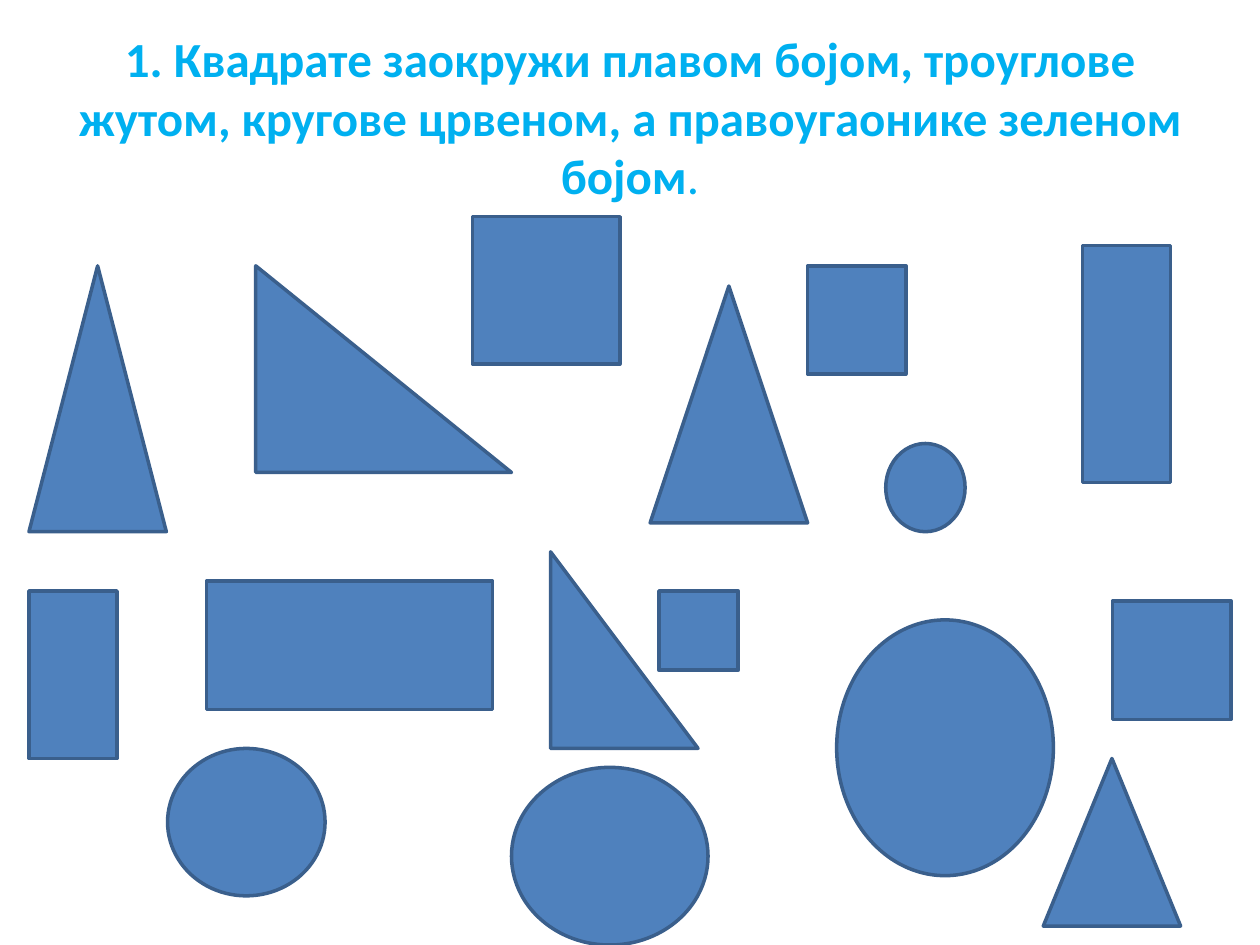
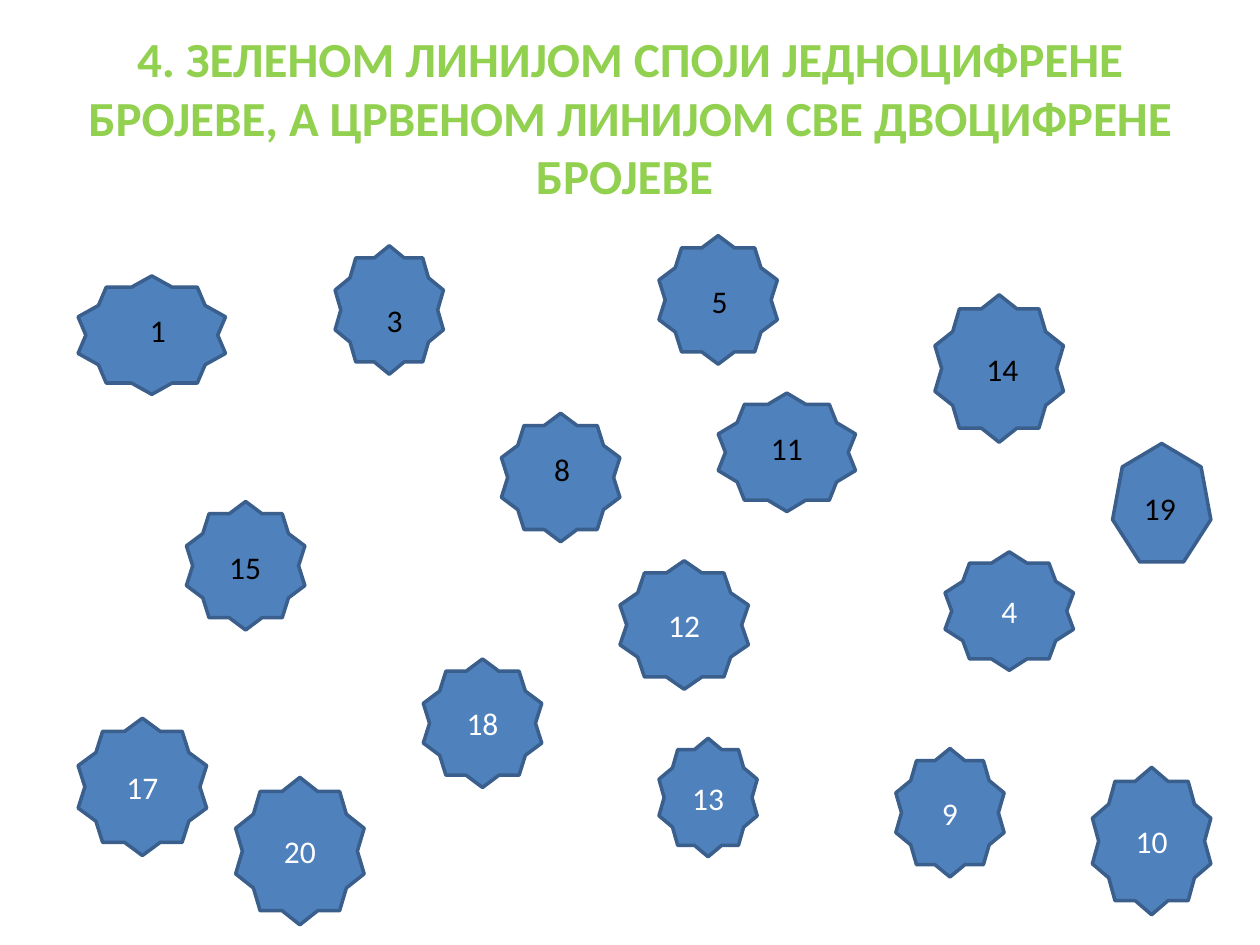
from dataclasses import dataclass

from pptx import Presentation
from pptx.dml.color import RGBColor
from pptx.enum.shapes import MSO_SHAPE
from pptx.enum.text import MSO_ANCHOR, MSO_AUTO_SIZE, PP_ALIGN
from pptx.util import Inches, Pt

TRIANGLE = MSO_SHAPE.ISOSCELES_TRIANGLE
RIGHT_TRIANGLE = MSO_SHAPE.RIGHT_TRIANGLE
RECTANGLE = MSO_SHAPE.RECTANGLE
CIRCLE = MSO_SHAPE.OVAL
STAR = MSO_SHAPE.STAR_10_POINT
HEPTAGON = MSO_SHAPE.HEPTAGON
MIDDLE = MSO_ANCHOR.MIDDLE
CENTER = PP_ALIGN.CENTER
FIXED_SIZE = MSO_AUTO_SIZE.NONE
GROW = MSO_AUTO_SIZE.SHAPE_TO_FIT_TEXT
TITLE_ONLY = 5


@dataclass(frozen=True)
class Theme:
    font: str = "Calibri"
    title_size: int = 28
    number_size: int = 18
    line_width: int = 2
    fill: RGBColor = RGBColor(0x4F, 0x81, 0xBD)
    outline: RGBColor = RGBColor(0x3A, 0x5F, 0x8C)
    sky: RGBColor = RGBColor(0x00, 0xB0, 0xF0)
    lime: RGBColor = RGBColor(0x92, 0xD0, 0x50)
    black: RGBColor = RGBColor(0, 0, 0)
    white: RGBColor = RGBColor(0xFF, 0xFF, 0xFF)


class Worksheet:
    def __init__(self, theme):
        self.theme = theme
        self.deck = Presentation()
        self.deck.slide_width = Inches(10)
        self.deck.slide_height = Inches(7.5)
        self.slide = None

    def new_slide(self):
        self.slide = self.deck.slides.add_slide(self.deck.slide_layouts[TITLE_ONLY])
        self.slide.background.fill.solid()
        self.slide.background.fill.fore_color.rgb = self.theme.white

    def run(self, paragraph, text, size, color, bold=False):
        run = paragraph.add_run()
        run.text = text
        run.font.name = self.theme.font
        run.font.size = Pt(size)
        run.font.bold = bold
        run.font.color.rgb = color

    def title(self, color, *pieces):
        task = self.slide.shapes.title
        task.left, task.top, task.width, task.height = map(Inches, (0.5, 0.3, 9, 1.25))
        task.text_frame.auto_size = FIXED_SIZE
        task.text_frame.vertical_anchor = MIDDLE
        paragraph = task.text_frame.paragraphs[0]
        paragraph.alignment = CENTER
        for text, bold in pieces:
            self.run(paragraph, text, self.theme.title_size, color, bold)

    def figure(self, kind, box, number=None):
        figure = self.slide.shapes.add_shape(kind, *map(Inches, box))
        figure.shadow.inherit = False
        figure.fill.solid()
        figure.fill.fore_color.rgb = self.theme.fill
        figure.line.color.rgb = self.theme.outline
        figure.line.width = Pt(self.theme.line_width)
        if number is not None:
            figure.text_frame.vertical_anchor = MIDDLE
            paragraph = figure.text_frame.paragraphs[0]
            paragraph.alignment = CENTER
            self.run(paragraph, str(number), self.theme.number_size, self.theme.white)

    def label(self, number, left, top, width):
        label = self.slide.shapes.add_textbox(*map(Inches, (left, top, width, 0.4)))
        label.text_frame.word_wrap = True
        label.text_frame.auto_size = GROW
        self.run(label.text_frame.paragraphs[0], str(number),
                 self.theme.number_size, self.theme.black)


FIGURES = [
    (TRIANGLE, (0.23, 2.11, 1.09, 2.11)),
    (RIGHT_TRIANGLE, (2.03, 2.11, 2.03, 1.64)),
    (TRIANGLE, (5.16, 2.27, 1.25, 1.88)),
    (RECTANGLE, (0.23, 4.69, 0.7, 1.33)),
    (RECTANGLE, (1.64, 4.61, 2.27, 1.02)),
    (RECTANGLE, (3.75, 1.72, 1.17, 1.17)),
    (RECTANGLE, (6.41, 2.11, 0.78, 0.86)),
    (RECTANGLE, (5.23, 4.69, 0.63, 0.63)),
    (CIRCLE, (7.03, 3.52, 0.63, 0.7)),
    (CIRCLE, (1.33, 5.94, 1.25, 1.17)),
    (CIRCLE, (4.06, 6.09, 1.56, 1.41)),
    (CIRCLE, (6.64, 4.92, 1.72, 2.03)),
    (RECTANGLE, (8.59, 1.95, 0.7, 1.88)),
    (RECTANGLE, (8.83, 4.77, 0.94, 0.94)),
    (TRIANGLE, (8.28, 6.02, 1.09, 1.33)),
    (RIGHT_TRIANGLE, (4.37, 4.38, 1.17, 1.56)),
]

LABELLED_STARS = [
    ((0.62, 2.19, 1.17, 0.94), (1, 1.09, 2.42, 0.31)),
    ((2.66, 1.95, 0.86, 1.02), (3, 2.97, 2.34, 0.23)),
    ((1.48, 3.98, 0.94, 1.02), (15, 1.72, 4.3, 0.47)),
    ((3.98, 3.28, 0.94, 1.02), (8, 4.3, 3.52, 0.23)),
    ((5.23, 1.87, 0.94, 1.02), (5, 5.55, 2.19, 0.31)),
    ((7.42, 2.34, 1.02, 1.17), (14, 7.73, 2.73, 0.55)),
    ((5.7, 3.12, 1.09, 0.94), (11, 6.02, 3.36, 0.55)),
]

NUMBERED_STARS = [
    (12, (4.92, 4.45, 1.02, 1.02)),
    (18, (3.36, 5.23, 0.94, 1.02)),
    (17, (0.62, 5.7, 1.02, 1.09)),
    (13, (5.23, 5.86, 0.78, 0.94)),
    (4, (7.5, 4.38, 1.02, 0.94)),
    (9, (7.11, 5.94, 0.86, 1.02)),
    (10, (8.67, 6.09, 0.94, 1.17)),
    (20, (1.87, 6.17, 1.02, 1.17)),
]


def main():
    theme = Theme()
    sheet = Worksheet(theme)

    sheet.new_slide()
    sheet.title(
        theme.sky,
        ("1. Квадрате заокружи плавом бојом, троуглове жутом, "
         "кругове црвеном, а правоугаонике зеленом бојом", True),
        (".", False),
    )
    for kind, box in FIGURES:
        sheet.figure(kind, box)

    sheet.new_slide()
    sheet.title(
        theme.lime,
        ("4. ЗЕЛЕНОМ ЛИНИЈОМ СПОЈИ ЈЕДНОЦИФРЕНЕ БРОЈЕВЕ, "
         "А ЦРВЕНОМ ЛИНИЈОМ СВЕ ДВОЦИФРЕНЕ БРОЈЕВЕ ", True),
    )
    for box, label in LABELLED_STARS:
        sheet.figure(STAR, box)
        sheet.label(*label)
    for number, box in NUMBERED_STARS:
        sheet.figure(STAR, box, number)
    sheet.figure(HEPTAGON, (8.83, 3.52, 0.78, 0.94))
    sheet.label(19, 8.98, 3.83, 0.47)

    sheet.deck.save("out.pptx")


if __name__ == "__main__":
    main()
